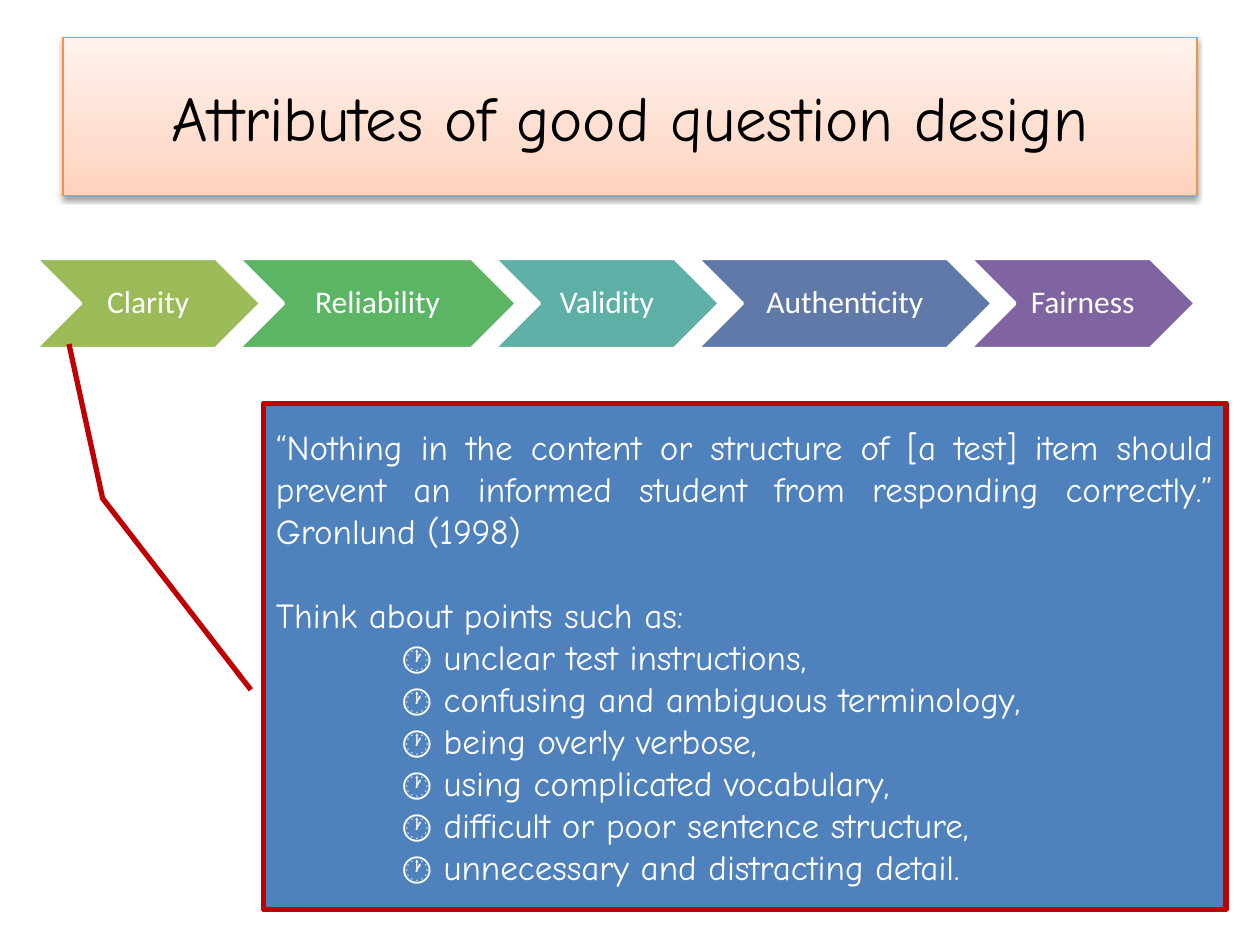
from dataclasses import dataclass

from lxml import etree
from pptx import Presentation
from pptx import util as u
from pptx.dml import color
from pptx.enum import shapes, text
from pptx.oxml import ns


@dataclass(frozen=True)
class Theme:
    hand_font: str = "Comic Neue"
    label_font: str = "Calibri"
    title_size: float = 36
    body_size: float = 20
    label_size: float = 18
    dark: str = "000000"
    light: str = "FFFFFF"
    title_line: str = "F69240"
    title_stops: tuple = ((0, "FFD2BD"), (35, "FFDED0"), (100, "FFF2ED"))
    callout_fill: str = "4F81BD"
    callout_line: str = "C00000"


@dataclass(frozen=True)
class Box:
    left: float
    top: float
    width: float
    height: float


@dataclass(frozen=True)
class Attribute:
    label: str
    width: float
    fill: str


@dataclass(frozen=True)
class Line:
    words: str
    align: text.PP_ALIGN = text.PP_ALIGN.LEFT
    indent: float = 0
    space_before: float = 0


THEME = Theme()
TITLE_BOX = Box(36, 21.6, 648, 90)
CALLOUT_BOX = Box(150.5, 230.4, 550, 289.4)
CALLOUT_POINTS = (0.566, -0.013, 0.188, -0.167, -0.117, -0.202)
CHAIN_LEFT, CHAIN_TOP, CHAIN_HEIGHT, CHAIN_OVERLAP = 20.2, 147.6, 51.6, 12.9

ATTRIBUTES = (
    Attribute("Clarity", 128.9, "9BBB59"),
    Attribute("Reliability", 159.1, "5CB565"),
    Attribute("Validity", 128.9, "5EAFA6"),
    Attribute("Authenticity", 168.7, "6179A8"),
    Attribute("Fairness", 128.9, "8064A2"),
)
QUOTE = (
    "“Nothing in the content or structure of [a test] item should prevent "
    "an informed student from responding correctly.” Gronlund (1998)"
)
POINTS = (
    "unclear test instructions,",
    "confusing and ambiguous terminology,",
    "being overly verbose,",
    "using complicated vocabulary,",
    "difficult or poor sentence structure,",
    "unnecessary and distracting detail.",
)


def rgb(value: str) -> color.RGBColor:
    return color.RGBColor.from_string(value)


def add_box(slide, kind, box: Box, fill: str, line: str, weight: float):
    shape = slide.shapes.add_shape(
        kind, u.Pt(box.left), u.Pt(box.top), u.Pt(box.width), u.Pt(box.height)
    )
    shape.shadow.inherit = False
    shape.fill.solid()
    shape.fill.fore_color.rgb = rgb(fill)
    shape.line.color.rgb = rgb(line)
    shape.line.width = u.Pt(weight)
    shape.text_frame.vertical_anchor = text.MSO_ANCHOR.MIDDLE
    return shape


def add_run(paragraph, words: str, font: str, size: float, ink: str) -> None:
    run = paragraph.add_run()
    run.text = words
    run.font.name = font
    run.font.size = u.Pt(size)
    run.font.color.rgb = rgb(ink)


def add_color(parent, value: str):
    return etree.SubElement(parent, ns.qn("a:srgbClr"), val=value)


def set_gradient(shape, stops: tuple, angle: int) -> None:
    shape.fill.gradient()
    gradient = shape.element.spPr.find(ns.qn("a:gradFill"))
    for child in list(gradient):
        gradient.remove(child)
    stop_list = etree.SubElement(gradient, ns.qn("a:gsLst"))
    for position, value in stops:
        stop = etree.SubElement(stop_list, ns.qn("a:gs"), pos=str(position * 1000))
        add_color(stop, value)
    etree.SubElement(gradient, ns.qn("a:lin"), ang=str(angle * 60000), scaled="0")


def set_shadow(shape, blur: float, distance: float, alpha: int) -> None:
    effects = shape.element.spPr.find(ns.qn("a:effectLst"))
    shadow = etree.SubElement(
        effects, ns.qn("a:outerShdw"), blurRad=str(u.Pt(blur)),
        dist=str(u.Pt(distance)), dir=str(90 * 60000), rotWithShape="0",
    )
    ink = add_color(shadow, THEME.dark)
    etree.SubElement(ink, ns.qn("a:alpha"), val=str(alpha * 1000))


def add_title(slide, words: str) -> None:
    shape = add_box(slide, shapes.MSO_SHAPE.RECTANGLE, TITLE_BOX,
                    THEME.light, THEME.title_line, 0.75)
    set_gradient(shape, THEME.title_stops, 270)
    set_shadow(shape, 3.1, 1.6, 38)
    paragraph = shape.text_frame.paragraphs[0]
    paragraph.alignment = text.PP_ALIGN.CENTER
    add_run(paragraph, words, THEME.hand_font, THEME.title_size, THEME.dark)


def add_chain(slide, attributes: tuple[Attribute, ...]) -> None:
    left = CHAIN_LEFT
    for attribute in attributes:
        box = Box(left, CHAIN_TOP, attribute.width, CHAIN_HEIGHT)
        shape = add_box(slide, shapes.MSO_SHAPE.CHEVRON, box,
                        attribute.fill, THEME.light, 2)
        frame = shape.text_frame
        frame.word_wrap = False
        frame.margin_left = frame.margin_right = u.Pt(2)
        frame.margin_top = frame.margin_bottom = u.Pt(2)
        paragraph = frame.paragraphs[0]
        paragraph.alignment = text.PP_ALIGN.CENTER
        paragraph.line_spacing = 0.9
        add_run(paragraph, attribute.label, THEME.label_font,
                THEME.label_size, THEME.light)
        left += attribute.width - CHAIN_OVERLAP


def add_callout(slide, lines: list[Line]) -> None:
    shape = add_box(slide, shapes.MSO_SHAPE.LINE_CALLOUT_2, CALLOUT_BOX,
                    THEME.callout_fill, THEME.callout_line, 3)
    for index, value in enumerate(CALLOUT_POINTS):
        shape.adjustments[index] = value
    frame = shape.text_frame
    frame.word_wrap = True
    for index, line in enumerate(lines):
        paragraph = frame.add_paragraph() if index else frame.paragraphs[0]
        paragraph.alignment = line.align
        paragraph.space_before = u.Pt(line.space_before)
        paragraph._p.get_or_add_pPr().set("marL", str(u.Pt(line.indent)))
        add_run(paragraph, line.words, THEME.hand_font,
                THEME.body_size, THEME.light)


def main() -> None:
    presentation = Presentation()
    presentation.slide_width = u.Pt(720)
    presentation.slide_height = u.Pt(540)
    slide = presentation.slides.add_slide(presentation.slide_layouts[6])

    # Heading and chain of attributes
    add_title(slide, "Attributes of good question design")
    add_chain(slide, ATTRIBUTES)

    # Callout explaining the first attribute
    lines = [
        Line(QUOTE, text.PP_ALIGN.JUSTIFY),
        Line("Think about points such as:", space_before=24),
    ]
    lines += [Line(f"🕐 {point}", indent=72) for point in POINTS]
    add_callout(slide, lines)

    presentation.save("out.pptx")


if __name__ == "__main__":
    main()
